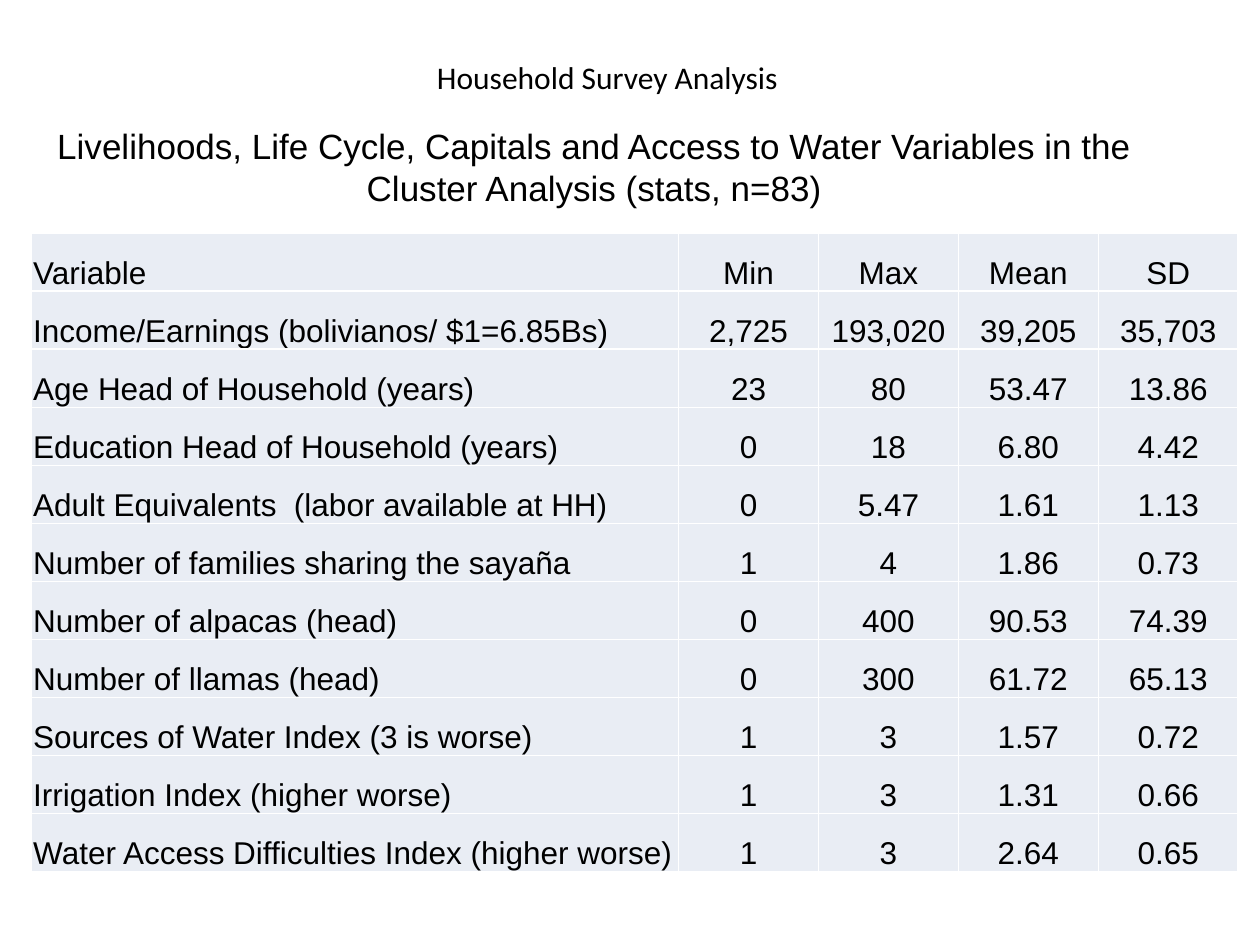
from pptx import Presentation
from pptx import util as u
from pptx.dml.color import RGBColor
from pptx.enum import text

HEADING = "Household Survey Analysis"
TITLE = ("Livelihoods, Life Cycle, Capitals and Access to Water Variables "
         "in the Cluster Analysis (stats, n=83)")
STATISTICS = [
    ("Variable", "Min", "Max", "Mean", "SD"),
    ("Income/Earnings (bolivianos/ $1=6.85Bs)", "2,725", "193,020", "39,205", "35,703"),
    ("Age Head of Household (years)", "23", "80", "53.47", "13.86"),
    ("Education Head of Household (years)", "0", "18", "6.80", "4.42"),
    ("Adult Equivalents  (labor available at HH)", "0", "5.47", "1.61", "1.13"),
    ("Number of families sharing the sayaña", "1", "4", "1.86", "0.73"),
    ("Number of alpacas (head)", "0", "400", "90.53", "74.39"),
    ("Number of llamas (head)", "0", "300", "61.72", "65.13"),
    ("Sources of Water Index (3 is worse)", "1", "3", "1.57", "0.72"),
    ("Irrigation Index (higher worse)", "1", "3", "1.31", "0.66"),
    ("Water Access Difficulties Index (higher worse)", "1", "3", "2.64", "0.65"),
]
COLORS = {"text": "000000", "cell": "E9EDF4"}
LEFT = u.Cm(0.64)
VARIABLE_WIDTH, STATISTIC_WIDTH, ROW_HEIGHT = u.Cm(13.04), u.Cm(2.82), u.Cm(1.17)


def write(frame, content, size, font="Arial", align=text.PP_ALIGN.CENTER):
    frame.text = content
    paragraph = frame.paragraphs[0]
    paragraph.alignment = align
    paragraph.font.size = u.Pt(size)
    paragraph.font.name = font
    paragraph.font.color.rgb = RGBColor.from_string(COLORS["text"])


def add_title(slide):
    title = slide.shapes.title
    title.left, title.top = LEFT, u.Cm(2.01)
    title.width, title.height = u.Cm(22.68), u.Cm(2.69)
    title.text_frame.vertical_anchor = text.MSO_ANCHOR.MIDDLE
    write(title.text_frame, TITLE, 20)


def add_statistics(slide):
    columns = len(STATISTICS[0])
    widths = [VARIABLE_WIDTH] + [STATISTIC_WIDTH] * (columns - 1)
    statistics = slide.shapes.add_table(
        len(STATISTICS), columns, LEFT, u.Cm(4.7),
        sum(widths), ROW_HEIGHT * len(STATISTICS)).table
    statistics.first_row = False
    statistics.horz_banding = False
    for column, width in zip(statistics.columns, widths):
        column.width = width
    for row, values in zip(statistics.rows, STATISTICS):
        row.height = ROW_HEIGHT
        for position, (cell, value) in enumerate(zip(row.cells, values)):
            cell.fill.solid()
            cell.fill.fore_color.rgb = RGBColor.from_string(COLORS["cell"])
            cell.vertical_anchor = text.MSO_ANCHOR.BOTTOM
            cell.margin_left = cell.margin_right = cell.margin_top = u.Cm(0.03)
            cell.margin_bottom = 0
            align = text.PP_ALIGN.CENTER if position else text.PP_ALIGN.LEFT
            write(cell.text_frame, value, 18, align=align)


def add_heading(slide):
    heading = slide.shapes.add_textbox(u.Cm(8.56), u.Cm(1.04), u.Cm(7.47), u.Cm(1.02))
    heading.text_frame.word_wrap = False
    heading.text_frame.auto_size = text.MSO_AUTO_SIZE.SHAPE_TO_FIT_TEXT
    write(heading.text_frame, HEADING, 18, "Calibri", text.PP_ALIGN.LEFT)


def main():
    deck = Presentation()
    deck.slide_width, deck.slide_height = u.Cm(25.4), u.Cm(19.05)
    slide = deck.slides.add_slide(deck.slide_layouts[5])
    add_title(slide)
    add_statistics(slide)
    add_heading(slide)
    deck.save("out.pptx")


if __name__ == "__main__":
    main()
